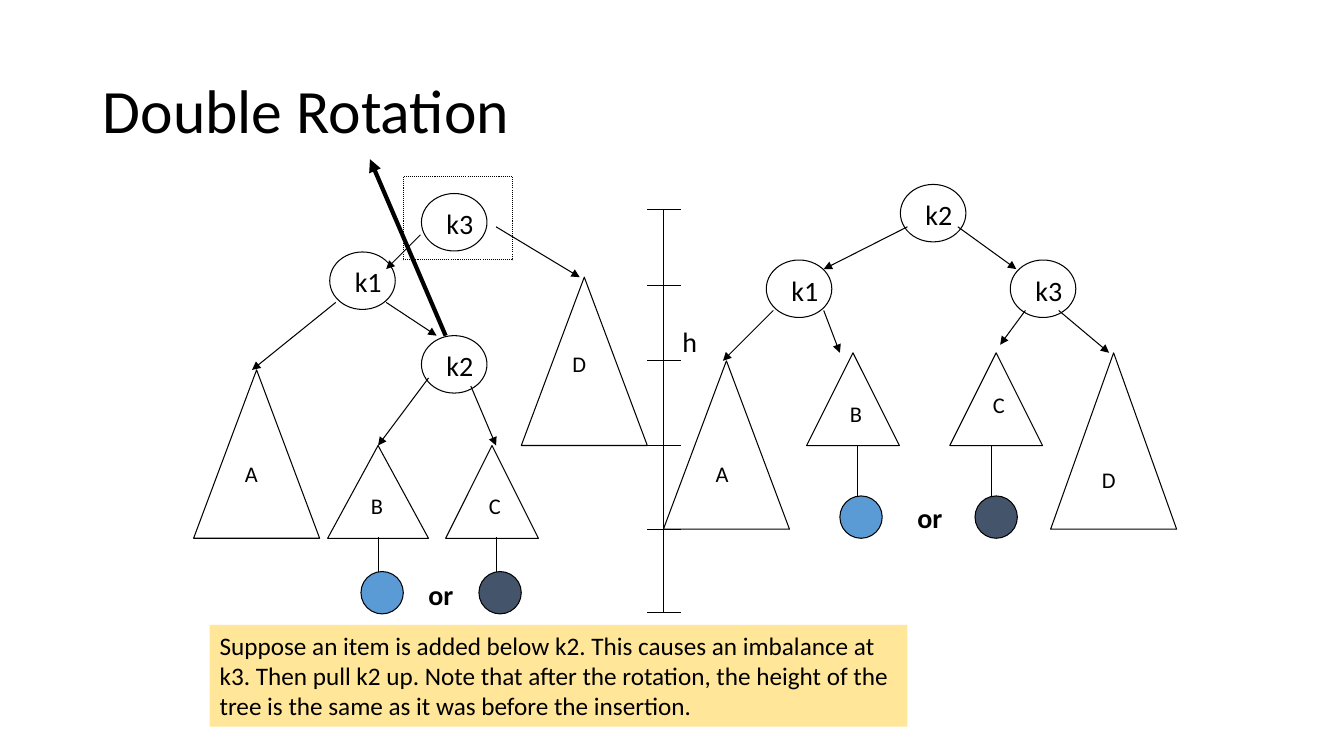
from pptx import Presentation
from pptx.dml.color import RGBColor
from pptx.enum.dml import MSO_LINE
from pptx.enum.shapes import MSO_CONNECTOR, MSO_SHAPE
from pptx.enum.text import MSO_ANCHOR, PP_ALIGN
from pptx.oxml.ns import qn
from pptx.util import Inches, Pt
from lxml import etree

ELLIPSE = MSO_SHAPE.OVAL
RECTANGLE = MSO_SHAPE.RECTANGLE
TRIANGLE = MSO_SHAPE.FLOWCHART_EXTRACT
STRAIGHT = MSO_CONNECTOR.STRAIGHT
DOTTED = MSO_LINE.ROUND_DOT
TOP, MIDDLE = MSO_ANCHOR.TOP, MSO_ANCHOR.MIDDLE
LEFT = PP_ALIGN.LEFT

COLORS = {"ink": "000000", "note": "FFE699", "blue": "5B9BD5", "slate": "44546A"}


class TreePage:
    """Draws search tree diagrams on one slide in a shared style."""

    def __init__(self, page, font="Calibri"):
        self.page = page
        self.font = font

    def color(self, name):
        return RGBColor.from_string(COLORS[name])

    def set_text(self, shape, text, size, bold=False, wrap=False, anchor=TOP, spacing=None):
        frame = shape.text_frame
        frame.text = text
        frame.word_wrap = wrap
        frame.vertical_anchor = anchor
        for para in frame.paragraphs:
            para.alignment = LEFT
            if spacing:
                para.line_spacing = spacing
            for span in para.runs:
                span.font.name = self.font
                span.font.size = Pt(size)
                span.font.bold = bold
                span.font.color.rgb = self.color("ink")

    def text(self, left, top, width, height, text, size, **style):
        box = self.page.shapes.add_textbox(
            Inches(left), Inches(top), Inches(width), Inches(height))
        self.set_text(box, text, size, **style)

    def shape(self, kind, left, top, width, height, fill=None, outlined=True, dash=None):
        shape = self.page.shapes.add_shape(
            kind, Inches(left), Inches(top), Inches(width), Inches(height))
        shape.shadow.inherit = False
        if fill:
            shape.fill.solid()
            shape.fill.fore_color.rgb = self.color(fill)
        else:
            shape.fill.background()
        if outlined:
            shape.line.color.rgb = self.color("ink")
            shape.line.width = Pt(0.75)
        else:
            shape.line.fill.background()
        if dash:
            shape.line.dash_style = dash
        return shape

    def line(self, x1, y1, x2, y2, weight=0.75, arrow=False):
        connector = self.page.shapes.add_connector(
            STRAIGHT, Inches(x1), Inches(y1), Inches(x2), Inches(y2))
        connector.line.color.rgb = self.color("ink")
        connector.line.width = Pt(weight)
        properties = connector._element.spPr
        if arrow:
            outline = properties.find(qn("a:ln"))
            etree.SubElement(outline, qn("a:tailEnd"), type="triangle")
        etree.SubElement(properties, qn("a:effectLst"))

    def node(self, left, top, key):
        self.shape(ELLIPSE, left, top, 0.65, 0.57)
        self.text(left + 0.15, top + 0.08, 0.48, 0.43, key, 20, wrap=True)

    def subtree(self, left, top, width, height, name, label_left, label_top):
        self.shape(TRIANGLE, left, top, width, height)
        self.text(label_left, label_top, 0.33, 0.37, name, 16)

    def new_item(self, left, top, fill, stem_x, stem_top):
        self.shape(ELLIPSE, left, top, 0.42, 0.42, fill)
        self.line(stem_x, stem_top, stem_x, top)

    def height_scale(self, x, ticks):
        self.line(x, ticks[0], x, ticks[-1])
        for tick in ticks:
            self.line(x - 0.16, tick, x + 0.17, tick)
        self.text(6.67, 3.17, 0.35, 0.44, "h", 20)

    def note(self, left, top, width, height, text):
        box = self.shape(RECTANGLE, left, top, width, height, "note", outlined=False)
        self.set_text(box, text, 18)


NODES = [
    (4.18, 1.92, "k3"), (3.27, 2.5, "k1"), (4.18, 3.33, "k2"),
    (8.93, 1.83, "k2"), (7.6, 2.58, "k1"), (10.02, 2.58, "k3"),
]
SUBTREES = [
    (1.92, 3.67, 1.25, 1.67, "A", 2.33, 4.52),
    (3.25, 4.42, 1, 0.92, "B", 3.58, 4.83),
    (4.42, 4.42, 0.92, 0.92, "C", 4.75, 4.83),
    (5.17, 2.75, 1.25, 1.67, "D", 5.58, 3.42),
    (6.58, 3.58, 1.25, 1.67, "A", 7, 4.52),
    (8, 3.5, 0.92, 0.92, "B", 8.33, 3.92),
    (9.42, 3.5, 0.92, 0.92, "C", 9.75, 3.83),
    (10.42, 3.5, 1.25, 1.75, "D", 10.83, 4.58),
]
BRANCHES = [
    (4.92, 2.25, 5.75, 2.75), (4.17, 2.33, 3.83, 2.67),
    (3.33, 3, 2.5, 3.67), (3.83, 3, 4.33, 3.33),
    (4.25, 3.75, 3.75, 4.42), (4.67, 3.83, 4.92, 4.42),
    (9, 2.25, 8.17, 2.67), (9.5, 2.25, 10.08, 2.67),
    (7.67, 3.08, 7.17, 3.58), (8.17, 3.08, 8.33, 3.5),
    (10.17, 3.08, 9.92, 3.42), (10.5, 3.08, 11, 3.5),
]
NEW_ITEMS = [
    (3.58, 5.67, "blue", 3.75, 5.33), (4.75, 5.67, "slate", 4.92, 5.33),
    (8.33, 4.92, "blue", 8.5, 4.42), (9.67, 4.92, "slate", 9.83, 4.42),
]
HEIGHT_TICKS = [2.08, 2.83, 3.58, 4.42, 5.25, 6.08]
NOTE = "\n".join([
    "Suppose an item is added below k2. This causes an imbalance at",
    "k3. Then pull k2 up. Note that after the rotation, the height of the",
    "tree is the same as it was before the insertion.",
])


def main():
    deck = Presentation()
    deck.slide_width, deck.slide_height = Inches(13.33), Inches(7.5)
    tree = TreePage(deck.slides.add_slide(deck.slide_layouts[6]))

    tree.text(0.92, 0.4, 11.5, 1.45, "Double Rotation", 44,
              wrap=True, anchor=MIDDLE, spacing=0.9)
    tree.height_scale(6.58, HEIGHT_TICKS)
    tree.note(2.08, 6.2, 6.92, 1.01, NOTE)
    tree.shape(RECTANGLE, 4, 1.75, 1.08, 0.83, dash=DOTTED)
    for node in NODES:
        tree.node(*node)
    for subtree in SUBTREES:
        tree.subtree(*subtree)
    for branch in BRANCHES:
        tree.line(*branch, arrow=True)
    tree.line(4.42, 3.33, 3.67, 1.58, weight=3, arrow=True)
    for item in NEW_ITEMS:
        tree.new_item(*item)
    for left, top in [(4.15, 5.68), (9, 4.92)]:
        tree.text(left, top, 0.46, 0.43, "or", 20, bold=True)

    deck.save("out.pptx")


if __name__ == "__main__":
    main()
